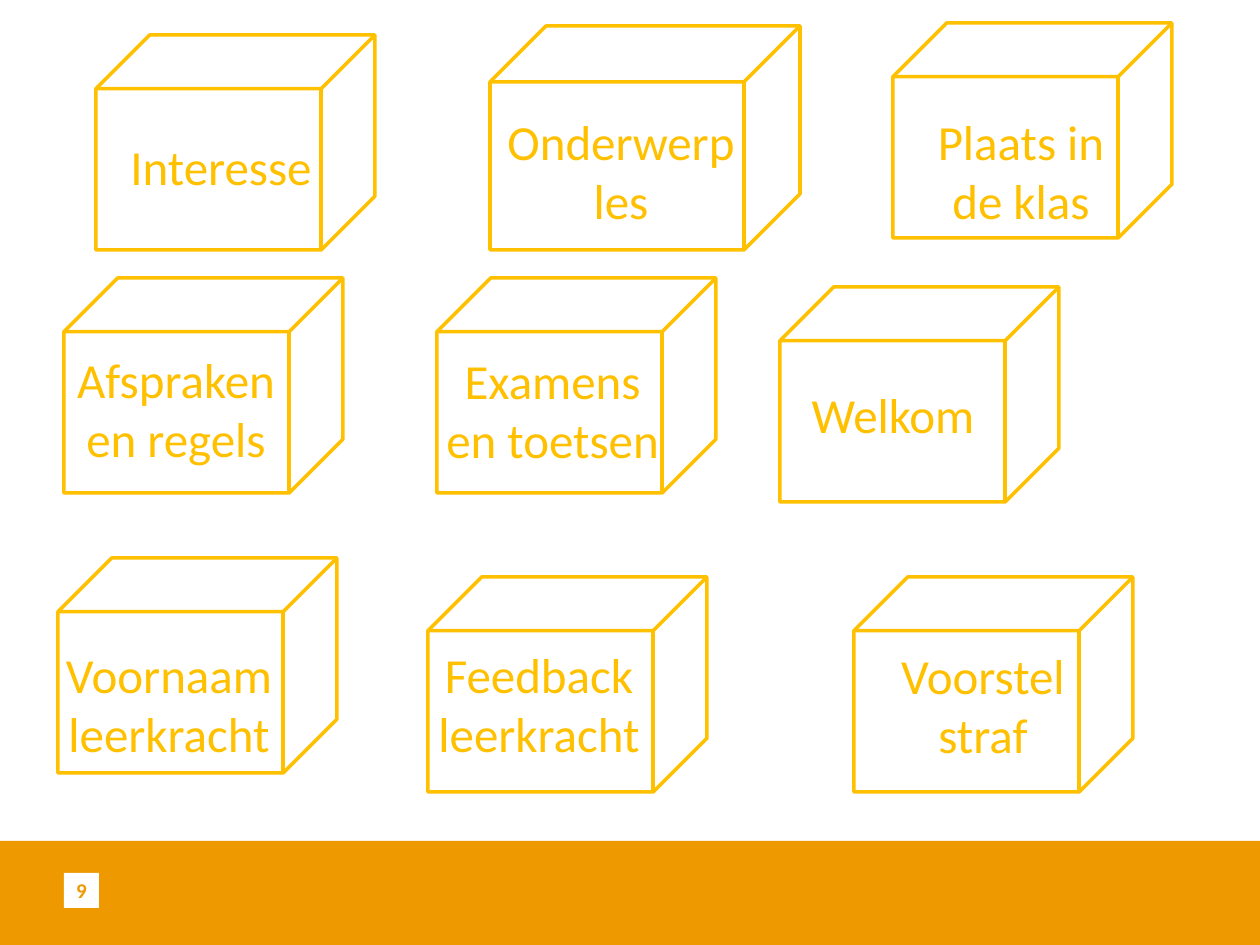
from dataclasses import dataclass

from pptx import Presentation
from pptx.dml.color import RGBColor
from pptx.enum.shapes import MSO_SHAPE
from pptx.enum.text import MSO_ANCHOR, PP_ALIGN
from pptx.util import Pt

PX = 914400 / 126
RECT, CUBE = MSO_SHAPE.RECTANGLE, MSO_SHAPE.CUBE
LEFT, CENTER = PP_ALIGN.LEFT, PP_ALIGN.CENTER
MIDDLE = MSO_ANCHOR.MIDDLE
ORANGE, GOLD, WHITE = "EE9900", "FFC000", "FFFFFF"
FONT = "Calibri"


@dataclass
class Box:
    x: int
    y: int
    w: int
    h: int


@dataclass
class LabeledCube:
    cube: Box
    label: Box
    text: str
    align: PP_ALIGN = CENTER


def cube_at(x: int, y: int) -> Box:
    return Box(x, y, 279, 215)


def label_at(x: int, y: int, w: int = 262, lines: int = 2) -> Box:
    return Box(x, y, w, 13 + 59 * lines)


CUBES = [
    LabeledCube(cube_at(96, 35), label_at(118, 130, 209, 1), "Interesse", LEFT),
    LabeledCube(Box(490, 26, 310, 224), label_at(490, 105), "Onderwerp les"),
    LabeledCube(cube_at(893, 23), label_at(890, 105), "Plaats in\nde klas"),
    LabeledCube(cube_at(64, 278), label_at(55, 343, 242), "Afspraken en regels"),
    LabeledCube(cube_at(437, 278), label_at(431, 344, 243), "Examens en toetsen"),
    LabeledCube(cube_at(780, 287), label_at(762, 378, lines=1), "Welkom"),
    LabeledCube(cube_at(58, 558), label_at(50, 638, 238), "Voornaam leerkracht"),
    LabeledCube(cube_at(428, 577), label_at(408, 638), "Feedback leerkracht"),
    LabeledCube(cube_at(854, 577), label_at(852, 639), "Voorstel straf"),
]


def px(n: int) -> int:
    return round(n * PX)


def place(box: Box) -> tuple[int, int, int, int]:
    return px(box.x), px(box.y), px(box.w), px(box.h)


def color(value: str) -> RGBColor:
    return RGBColor.from_string(value)


def add_bar(s, box: Box, fill: str):
    sp = s.shapes.add_shape(RECT, *place(box))
    sp.shadow.inherit = False
    sp.fill.solid()
    sp.fill.fore_color.rgb = color(fill)
    sp.line.fill.background()
    return sp


def add_cube(s, box: Box) -> None:
    sp = s.shapes.add_shape(CUBE, *place(box))
    sp.shadow.inherit = False
    sp.fill.background()
    sp.line.color.rgb = color(GOLD)
    sp.line.width = Pt(2)


def write(tf, text: str, size: int, rgb: str, align: PP_ALIGN = CENTER,
          bold: bool = False) -> None:
    tf.word_wrap = True
    tf.text = text
    for p in tf.paragraphs:
        p.alignment = align
        p.font.name = FONT
        p.font.size = Pt(size)
        p.font.bold = bold
        p.font.color.rgb = color(rgb)


def add_label(s, item: LabeledCube) -> None:
    sp = s.shapes.add_textbox(*place(item.label))
    write(sp.text_frame, item.text, 28, GOLD, item.align)


def add_page_number(s, number: str) -> None:
    tf = add_bar(s, Box(64, 873, 35, 35), WHITE).text_frame
    tf.margin_left = tf.margin_right = tf.margin_top = tf.margin_bottom = px(5)
    tf.vertical_anchor = MIDDLE
    write(tf, number, 12, ORANGE, bold=True)


def main() -> None:
    prs = Presentation()
    prs.slide_width, prs.slide_height = px(1260), px(945)
    s = prs.slides.add_slide(prs.slide_layouts[6])
    add_bar(s, Box(0, 841, 1260, 104), ORANGE)
    add_page_number(s, "9")
    for item in CUBES:
        add_cube(s, item.cube)
        add_label(s, item)
    prs.save("out.pptx")


if __name__ == "__main__":
    main()
